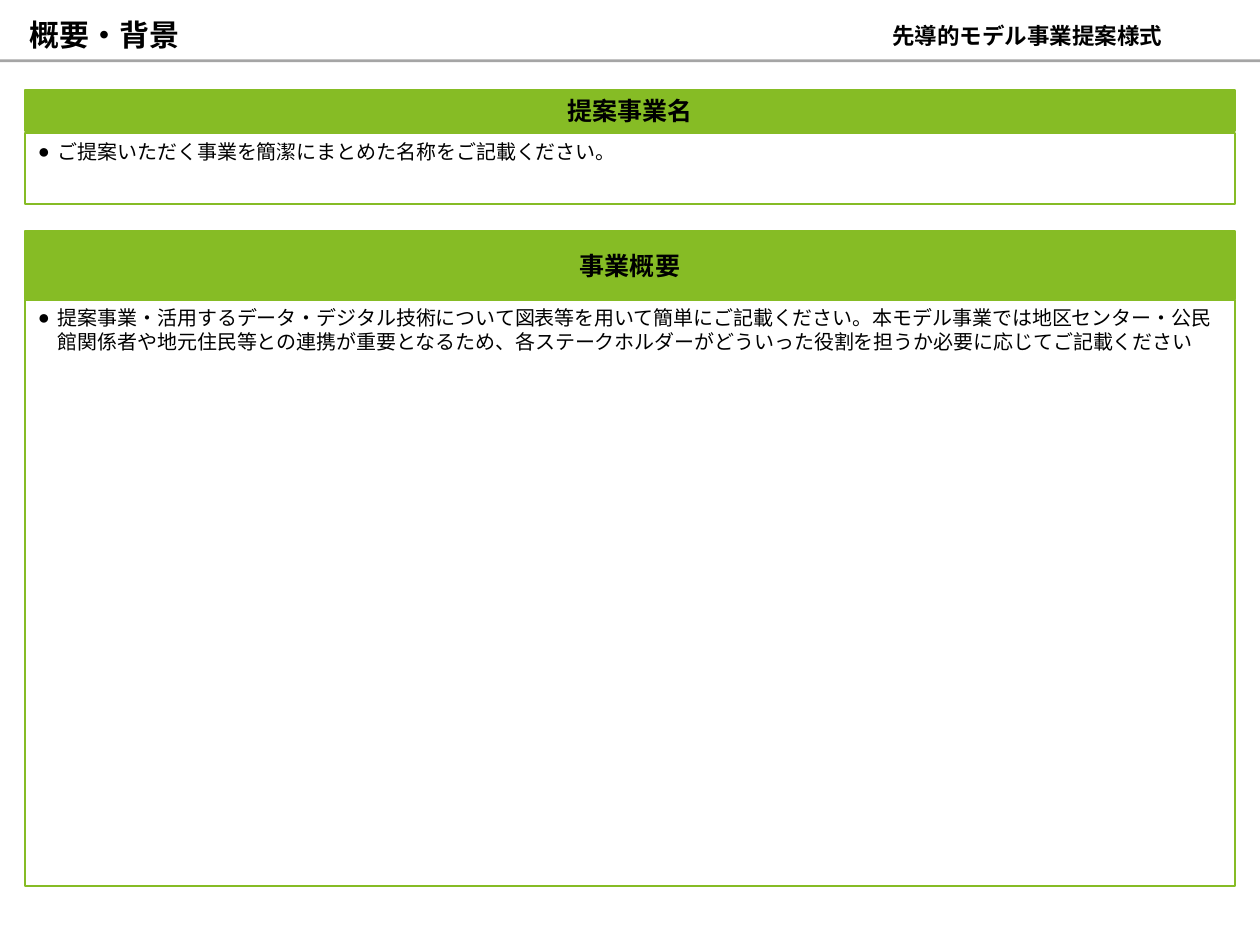
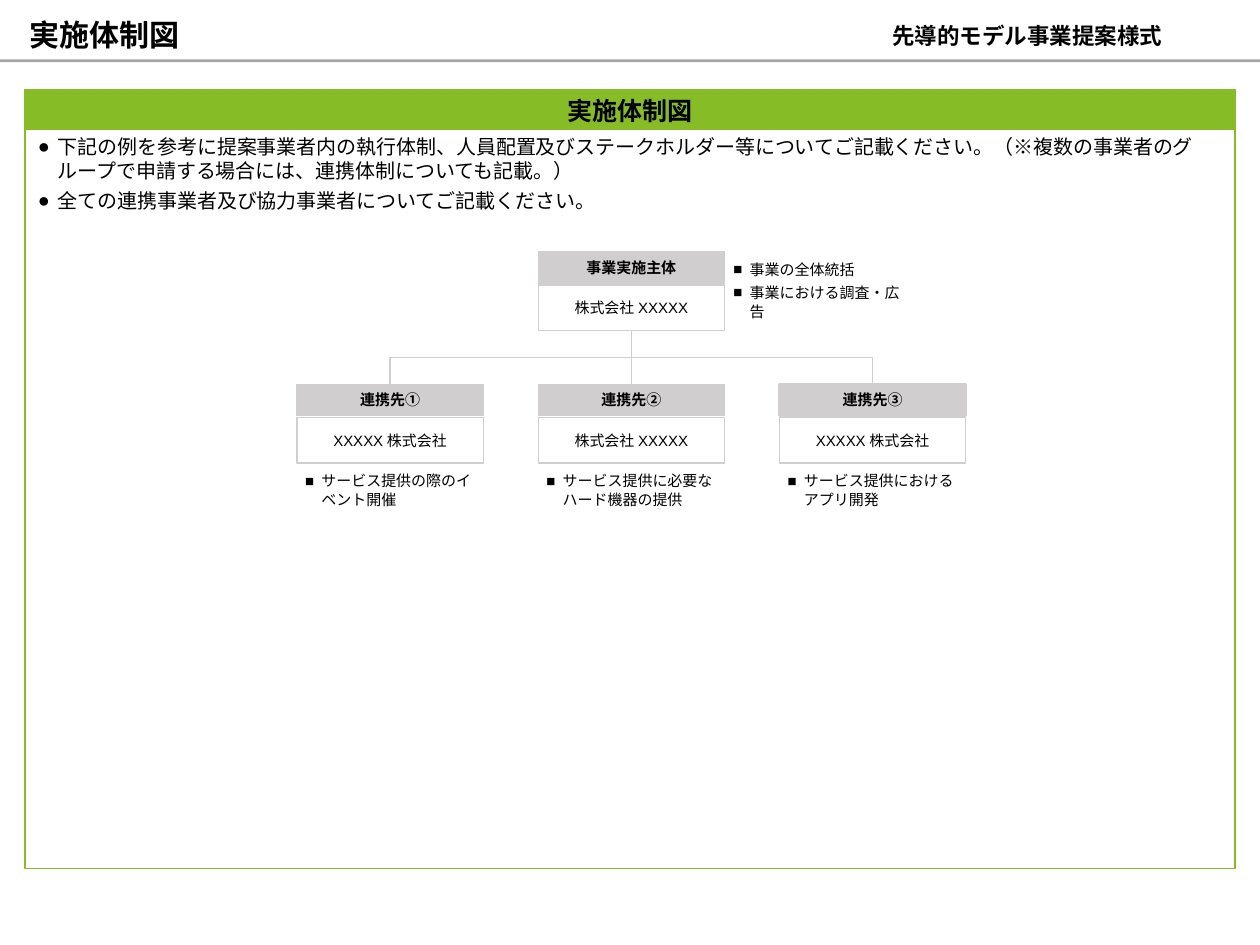
import pptx
import pptx.dml.color
import pptx.enum.shapes
import pptx.enum.text
import pptx.oxml.ns
import pptx.util
from lxml import etree

Pt = pptx.util.Pt
qn = pptx.oxml.ns.qn
ALIGN = pptx.enum.text.PP_ALIGN
ANCHOR = pptx.enum.text.MSO_ANCHOR
CONNECTOR = pptx.enum.shapes.MSO_CONNECTOR

JAPANESE = "Noto Sans CJK JP"
BLACK, WHITE = "000000", "FFFFFF"
GREEN, RULE_GRAY, CARD_GRAY = "86BC25", "A5A5A5", "D0CECE"

PANEL_LEFT, PANEL_WIDTH = 20.2, 967.6
CARD_WIDTH, CARD_HEAD, CARD_BODY = 149, 25.2, 36.7
CARD_BODY_OFFSET = 26.4
CARD_LEFT, CARD_STEP = 237.6, 193
LEAD_TOP, PARTNER_TOP = 201.6, 307.4


def color(code):
    return pptx.dml.color.RGBColor.from_string(code)


def style_paragraph(para, font, size, bold=False):
    para.font.size = Pt(size)
    para.font.bold = bold
    para.font.color.rgb = color(BLACK)
    para.font.name = font
    defaults = para._p.pPr.find(qn("a:defRPr"))
    etree.SubElement(defaults, qn("a:ea")).set("typeface", JAPANESE)


def add_bullet(para, symbol, margin, indent):
    properties = para._p.get_or_add_pPr()
    properties.set("marL", str(Pt(margin)))
    properties.set("indent", str(Pt(-indent)))
    etree.SubElement(properties, qn("a:buFont")).set("typeface", "Arial")
    etree.SubElement(properties, qn("a:buChar")).set("char", symbol)


def set_frame(shape, anchor, side=0, end=0, wrap=True):
    frame = shape.text_frame
    frame.auto_size = pptx.enum.text.MSO_AUTO_SIZE.NONE
    frame.word_wrap = wrap
    frame.vertical_anchor = anchor
    frame.margin_left = frame.margin_right = Pt(side)
    frame.margin_top = frame.margin_bottom = Pt(end)
    return frame


def write_line(frame, text, font, size, bold=False, align=ALIGN.CENTER):
    para = frame.paragraphs[0]
    para.text = text
    para.alignment = align
    style_paragraph(para, font, size, bold)


def write_list(frame, items, font, size, symbol, margin, indent,
               gap, level=0, spacing=None):
    for index, item in enumerate(items):
        para = frame.paragraphs[0] if index == 0 else frame.add_paragraph()
        para.text = item
        para.level = level
        para.alignment = ALIGN.LEFT
        if spacing:
            para.line_spacing = spacing
        if index:
            para.space_before = Pt(gap)
        add_bullet(para, symbol, margin, indent)
        style_paragraph(para, font, size)


def add_box(page, left, top, width, height, fill, line=None, weight=1):
    box = page.shapes.add_shape(
        pptx.enum.shapes.MSO_SHAPE.RECTANGLE,
        Pt(left), Pt(top), Pt(width), Pt(height))
    box.shadow.inherit = False
    box.fill.solid()
    box.fill.fore_color.rgb = color(fill)
    if line:
        box.line.color.rgb = color(line)
        box.line.width = Pt(weight)
    else:
        box.line.fill.background()
    return box


def add_page(deck, title, font):
    """Add a slide with its title, form name and gray rule."""
    page = deck.slides.add_slide(deck.slide_layouts[5])
    heading = page.shapes.title
    heading.left, heading.top = Pt(23.8), Pt(15.1)
    heading.width, heading.height = Pt(494.6), Pt(26.6)
    write_line(set_frame(heading, ANCHOR.BOTTOM), title, font, 24, True,
               ALIGN.LEFT)
    add_box(page, 0, 47.5, 1008, 2.2, RULE_GRAY)
    form_name = page.shapes.add_textbox(Pt(656), Pt(22.3), Pt(332), Pt(17.3))
    write_line(set_frame(form_name, ANCHOR.BOTTOM),
               "先導的モデル事業提案様式", JAPANESE, 18, True)
    return page


def add_panel(page, title, items, font, top, head, body_top, body):
    """Add a bulleted white panel under a green heading."""
    band = add_box(page, PANEL_LEFT, top, PANEL_WIDTH, head, GREEN, GREEN, 1.5)
    write_line(set_frame(band, ANCHOR.MIDDLE, 10, 5, wrap=False),
               title, font, 20, True)
    panel = add_box(page, PANEL_LEFT, body_top, PANEL_WIDTH, body,
                    WHITE, GREEN, 1.5)
    write_list(set_frame(panel, ANCHOR.TOP, 10, 5), items, font, 16,
               "●", 16, 16, 4.3)


def add_card(page, left, top, role, spans, weight=1):
    """Add a role heading over a company name; return both boxes."""
    head = add_box(page, left, top, CARD_WIDTH, CARD_HEAD,
                   CARD_GRAY, CARD_GRAY, weight)
    write_line(set_frame(head, ANCHOR.MIDDLE, 5.8, 5.8), role, "Arial", 12, True)
    body = add_box(page, left, top + CARD_BODY_OFFSET, CARD_WIDTH, CARD_BODY,
                   WHITE, CARD_GRAY)
    frame = set_frame(body, ANCHOR.MIDDLE, 5.8, 5.8)
    para = frame.paragraphs[0]
    para.alignment = ALIGN.CENTER
    style_paragraph(para, "Arial", 12)
    for text, font in spans:
        span = para.add_run()
        span.text = text
        if font != "Arial":
            span.font.name = font
    return head, body


def add_duties(page, left, top, height, items):
    box = page.shapes.add_textbox(Pt(left), Pt(top), Pt(CARD_WIDTH), Pt(height))
    write_list(set_frame(box, ANCHOR.TOP, 5.8, 5.8), items, "Calibri", 12,
               "■", 13.7, 13, 3, level=1, spacing=1.06)


def add_link(page, kind, start, end):
    link = page.shapes.add_connector(kind, *(Pt(value) for value in start + end))
    link.line.color.rgb = color(CARD_GRAY)
    link.line.width = Pt(1)
    etree.SubElement(link._element.spPr, qn("a:effectLst"))
    return link


def add_branch(page, start, end):
    """Add an elbow that leaves downwards, by turning a sideways one."""
    run, drop = abs(end[0] - start[0]), end[1] - start[1]
    middle_x, middle_y = (start[0] + end[0]) / 2, (start[1] + end[1]) / 2
    left, right = middle_x - drop / 2, middle_x + drop / 2
    top, bottom = middle_y - run / 2, middle_y + run / 2
    to_right = end[0] > start[0]
    if to_right:
        left, right = right, left
    link = add_link(page, CONNECTOR.ELBOW, (left, top), (right, bottom))
    turn = 270 if to_right else 90
    link._element.spPr.find(qn("a:xfrm")).set("rot", str(turn * 60000))


def add_organization(page):
    lead_left = CARD_LEFT + CARD_STEP
    center = lead_left + CARD_WIDTH / 2
    lead_bottom = LEAD_TOP + CARD_BODY_OFFSET + CARD_BODY
    for side in (-1, 1):
        add_branch(page, (center, lead_bottom),
                   (center + side * CARD_STEP, PARTNER_TOP))
    trunk = add_link(page, CONNECTOR.STRAIGHT,
                     (center, PARTNER_TOP), (center, lead_bottom))

    lead_body = add_card(page, lead_left, LEAD_TOP, "事業実施主体",
                         [("株式会社", "Calibri"), ("XXXXX", "Arial")])[1]
    add_duties(page, 580.3, LEAD_TOP, 62.6,
               ["事業の全体統括", "事業における調査・広告"])

    partners = [
        ("連携先①", [("XXXXX", "Arial"), ("株式会社", "Calibri")], 1,
         "サービス提供の際のイベント開催"),
        ("連携先②", [("株式会社XXXXX", "Arial")], 1,
         "サービス提供に必要なハード機器の提供"),
        ("連携先③", [("XXXXX株式会社", "Arial")], 2,
         "サービス提供におけるアプリ開発"),
    ]
    heads = []
    for index, (role, spans, weight, duty) in enumerate(partners):
        left = CARD_LEFT + index * CARD_STEP
        heads.append(add_card(page, left, PARTNER_TOP, role, spans, weight)[0])
        add_duties(page, left, 370.8, 56.9, [duty])
    trunk.begin_connect(heads[1], 0)
    trunk.end_connect(lead_body, 2)


def main():
    deck = pptx.Presentation()
    deck.slide_width, deck.slide_height = Pt(1008), Pt(756)

    overview = add_page(deck, "概要・背景", JAPANESE)
    add_panel(overview, "事業概要", [
        "提案事業・活用するデータ・デジタル技術について図表等を用いて簡単にご記載ください。"
        "本モデル事業では地区センター・公民館関係者や地元住民等との連携が重要となるため、"
        "各ステークホルダーがどういった役割を担うか必要に応じてご記載ください",
    ], JAPANESE, 185, 54.7, 239.8, 468.7)
    add_panel(overview, "提案事業名", [
        "ご提案いただく事業を簡潔にまとめた名称をご記載ください。",
    ], JAPANESE, 72, 33.1, 106.6, 56.9)

    structure = add_page(deck, "実施体制図", "Calibri")
    add_panel(structure, "実施体制図", [
        "下記の例を参考に提案事業者内の執行体制、人員配置及びステークホルダー等について"
        "ご記載ください。（※複数の事業者のグループで申請する場合には、連携体制についても記載。）",
        "全ての連携事業者及び協力事業者についてご記載ください。",
    ], "Calibri", 71.6, 33.1, 103, 591.8)
    add_organization(structure)

    deck.save("out.pptx")


if __name__ == "__main__":
    main()
